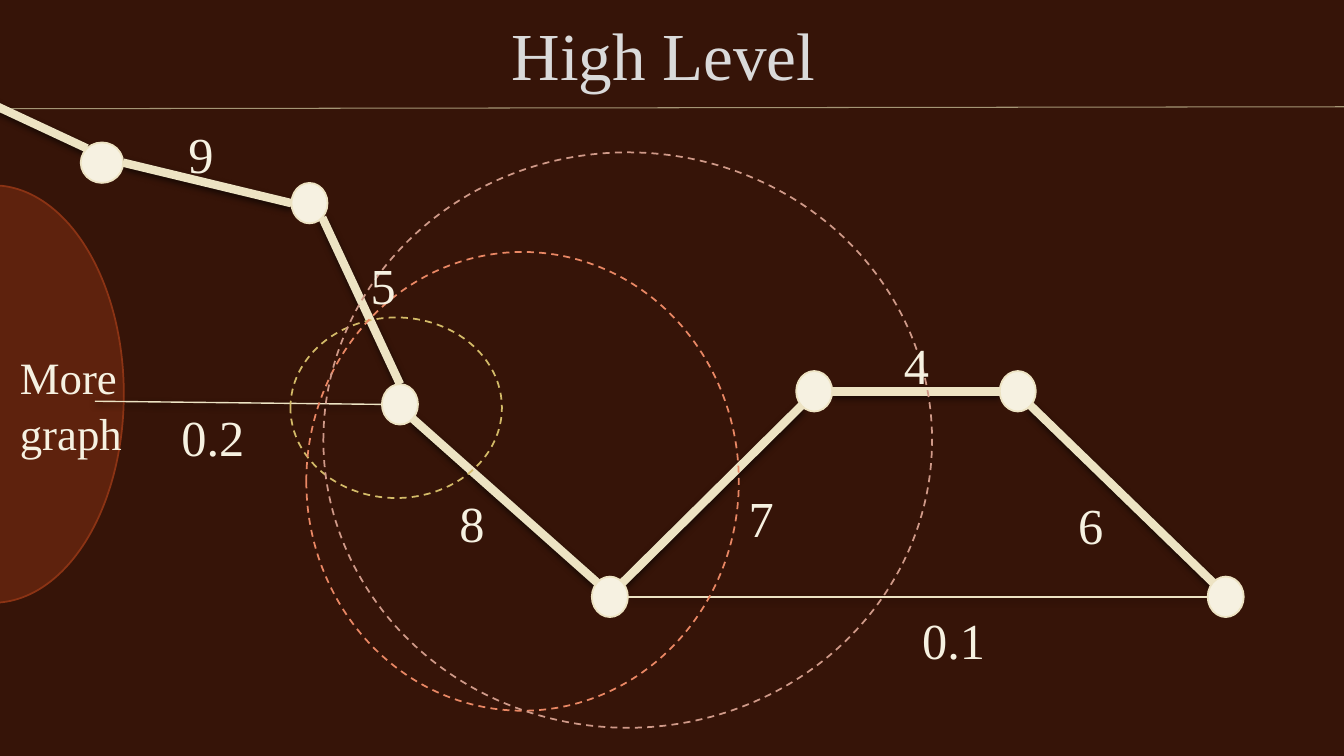
from dataclasses import dataclass
from math import cos, radians, sin

from lxml.etree import SubElement
from pptx import Presentation
from pptx.dml.color import RGBColor
from pptx.enum.dml import MSO_LINE
from pptx.enum.shapes import MSO_CONNECTOR as Connector, MSO_SHAPE as Shape
from pptx.enum.text import MSO_ANCHOR as Anchor, PP_ALIGN as Align
from pptx.oxml.ns import qn
from pptx.util import Cm, Pt


@dataclass(frozen=True)
class Theme:
    """Colours, font and sizes of the slide."""
    background: str = "361408"
    title: str = "DADADA"
    text: str = "F6F1E1"
    edge: str = "EDE3C3"
    rule: str = "A59675"
    lobe: str = "5E220D"
    lobe_line: str = "8B3314"
    font: str = "Times New Roman"
    title_size: int = 48
    label_size: int = 36
    note_size: int = 32
    thick: float = 6
    thin: float = 1
    outline: float = 1.25
    hairline: float = 0.75


THEME = Theme()
WIDTH, HEIGHT = 33.87, 19.05
NODE_HEIGHT = 1.02
NODES = {
    "A": (2.57, 4.1, 1.07),
    "B": (7.8, 5.12, 0.91),
    "C": (10.08, 10.19, 0.91),
    "D": (15.37, 15.04, 0.91),
    "E": (20.52, 9.86, 0.91),
    "F": (25.65, 9.86, 0.91),
    "G": (30.89, 15.04, 0.91),
}
EDGES = [
    ("A", 0, "B", 180, THEME.thick),
    ("B", 45, "C", 270, THEME.thick),
    ("C", 45, "D", 225, THEME.thick),
    ("D", 315, "E", 135, THEME.thick),
    ("E", 0, "F", 180, THEME.thick),
    ("F", 45, "G", 225, THEME.thick),
    ("D", 0, "G", 180, THEME.thin),
]
INCOMING = [
    ((-1.02, 2.24), "A", 225, THEME.thick),
    ((2.39, 10.11), "C", 180, THEME.thin),
]
RINGS = [
    ((7.32, 8, 5.33, 4.55), "D3BA68"),
    ((7.72, 6.35, 10.9, 11.56), "E98764"),
    ((8.15, 3.84, 15.34, 14.5), "CF9988"),
]
WEIGHTS = [
    ("9", 4.5, 2.9),
    ("5", 9.09, 6.2),
    ("0.2", 4.32, 10.03),
    ("8", 11.33, 12.19),
    ("7", 18.62, 12.07),
    ("4", 22.53, 8.23),
    ("6", 26.92, 12.24),
    ("0.1", 22.99, 15.16),
]


def apply_format(target, values):
    """Set each attribute named in values."""
    for name, value in values.items():
        setattr(target, name, value)


def color(code):
    """Turn a hex code into a colour."""
    return RGBColor.from_string(code)


def add_effects(properties, shadow=True):
    """Make an effect list, with a soft shadow below if wanted."""
    effects = SubElement(properties, qn("a:effectLst"))
    if shadow:
        outer = SubElement(effects, qn("a:outerShdw"), blurRad=str(Pt(5)),
                           dist=str(Pt(2)), dir="5400000", rotWithShape="0")
        black = SubElement(outer, qn("a:srgbClr"), val="000000")
        SubElement(black, qn("a:alpha"), val="60000")
    return effects


def add_line(slide, start, end, line_color, width, shadow=True):
    """Draw a straight line between two points."""
    ends = [Cm(value) for value in (*start, *end)]
    line = slide.shapes.add_connector(Connector.STRAIGHT, *ends)
    line.line.color.rgb = color(line_color)
    line.line.width = Pt(width)
    add_effects(line._element.spPr, shadow)


def add_ellipse(slide, box, line_color, fill=None, dash=None):
    """Draw an ellipse, filled or open."""
    ellipse = slide.shapes.add_shape(Shape.OVAL, *map(Cm, box))
    ellipse.shadow.inherit = False
    if fill:
        ellipse.fill.solid()
        ellipse.fill.fore_color.rgb = color(fill)
    else:
        ellipse.fill.background()
    ellipse.line.color.rgb = color(line_color)
    apply_format(ellipse.line, {"width": Pt(THEME.outline), "dash_style": dash})


def write_text(frame, text, size, text_color):
    """Put one formatted run into a text frame."""
    run = frame.paragraphs[0].add_run()
    run.text = text
    apply_format(run.font, {"size": Pt(size), "name": THEME.font})
    run.font.color.rgb = color(text_color)
    return run


def add_label(slide, text, box, size):
    """Add a wrapped text box."""
    frame = slide.shapes.add_textbox(*map(Cm, box)).text_frame
    frame.word_wrap = True
    frame.paragraphs[0].line_spacing = 1.05
    write_text(frame, text, size, THEME.text)


def add_title(slide, text):
    """Fill the title placeholder."""
    title = slide.shapes.title
    apply_format(title, {"left": 0, "top": 0, "width": Cm(WIDTH), "height": Cm(2.69)})
    title.text_frame.vertical_anchor = Anchor.MIDDLE
    title.text_frame.paragraphs[0].alignment = Align.CENTER
    run = write_text(title.text_frame, text, THEME.title_size, THEME.title)
    properties = run.font._element
    properties.find(qn("a:solidFill")).addnext(add_effects(properties))


def node_site(name, angle):
    """Find the point on a node's rim at a clockwise angle."""
    x, y, width = NODES[name]
    turn = radians(angle)
    return x + width / 2 * cos(turn), y + NODE_HEIGHT / 2 * sin(turn)


def main():
    """Build and save the slide."""
    presentation = Presentation()
    apply_format(presentation, {"slide_width": Cm(WIDTH), "slide_height": Cm(HEIGHT)})
    slide = presentation.slides.add_slide(presentation.slide_layouts[5])
    slide.background.fill.solid()
    slide.background.fill.fore_color.rgb = color(THEME.background)

    add_ellipse(slide, (-3.48, 4.67, 6.6, 10.52), THEME.lobe_line, THEME.lobe)
    add_title(slide, "High Level ")
    add_line(slide, (0, 2.74), (WIDTH, 2.69), THEME.rule, THEME.hairline, shadow=False)
    for start, start_angle, end, end_angle, width in EDGES:
        add_line(slide, node_site(start, start_angle), node_site(end, end_angle),
                 THEME.edge, width)
    for point, end, angle, width in INCOMING:
        add_line(slide, point, node_site(end, angle), THEME.edge, width)
    for x, y, width in NODES.values():
        box = (x - width / 2, y - NODE_HEIGHT / 2, width, NODE_HEIGHT)
        add_ellipse(slide, box, THEME.edge, THEME.text)
    for box, line_color in RINGS:
        add_ellipse(slide, box, line_color, dash=MSO_LINE.DASH)
    for text, left, top in WEIGHTS:
        add_label(slide, text, (left, top, 2.4, 1.8), THEME.label_size)
    add_label(slide, "More graph", (0.25, 8.61, 3.1, 3), THEME.note_size)
    presentation.save("out.pptx")


if __name__ == "__main__":
    main()
